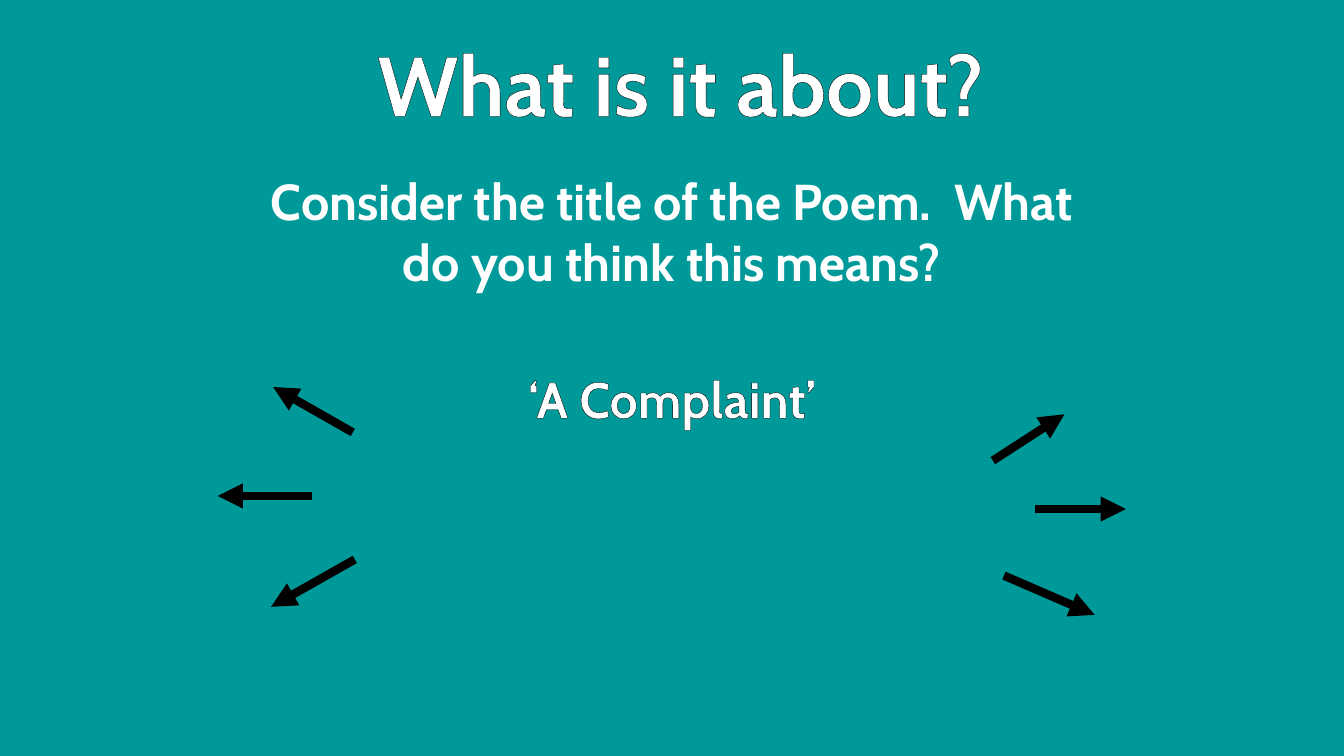
"""Build a slide asking what the title of a poem means."""
from lxml.etree import SubElement
from pptx import Presentation
from pptx.dml.color import RGBColor
from pptx.enum.shapes import MSO_CONNECTOR
from pptx.enum.text import MSO_ANCHOR, MSO_AUTO_SIZE, PP_ALIGN
from pptx.oxml.ns import qn
from pptx.util import Inches, Pt

TEAL = RGBColor(0x00, 0x99, 0x99)
WHITE = RGBColor(0xFF, 0xFF, 0xFF)
BLACK = RGBColor(0x00, 0x00, 0x00)

COLUMNS, ROWS = 160, 90
TITLE = {"text": "What is it about?", "place": (20, 3.24, 120, 13.32),
         "size": 60, "outline": 1.5, "wrap": True, "indent": 0.27}
QUESTION = {"text": "Consider the title of the Poem.  What do you think this means?",
            "place": (30.6, 19.68, 98.76, 15.72),
            "size": 36, "outline": 0, "wrap": True, "indent": 0.1}
POEM = {"text": "‘A Complaint’", "place": (45.48, 43.2, 69, 35.76),
        "size": 36, "outline": 2.25, "wrap": False, "indent": 0.1}
ARROWS = [
    ((42, 51.48), (32.52, 46.08)),
    ((37.2, 59.04), (25.92, 59.04)),
    ((42.24, 66.6), (32.28, 72.24)),
    ((118.2, 54.84), (126.72, 49.32)),
    ((123.24, 60.6), (134.04, 60.6)),
    ((119.52, 68.52), (130.32, 73.2)),
]

deck = Presentation()
deck.slide_width, deck.slide_height = Inches(13.33), Inches(7.5)


def to_lengths(place):
    """Turn alternating columns and rows into slide lengths."""
    units = (deck.slide_width / COLUMNS, deck.slide_height / ROWS)
    return [round(value * units[index % 2]) for index, value in enumerate(place)]


def outline_text(span, width):
    """Draw a black line around the letters."""
    line = SubElement(span.font._element, qn("a:ln"), w=str(Pt(width)))
    span.font._element.insert(0, line)
    fill = SubElement(line, qn("a:solidFill"))
    SubElement(fill, qn("a:srgbClr"), val=str(BLACK))


def write(box, content):
    """Place a box and fill it with one centred, bold paragraph."""
    box.left, box.top, box.width, box.height = to_lengths(content["place"])
    frame = box.text_frame
    frame_format = {"word_wrap": content["wrap"], "auto_size": MSO_AUTO_SIZE.NONE,
                    "vertical_anchor": MSO_ANCHOR.TOP,
                    "margin_left": Inches(content["indent"])}
    for name, value in frame_format.items():
        setattr(frame, name, value)
    para = frame.paragraphs[0]
    para.alignment = PP_ALIGN.CENTER
    para.space_before = Pt(0)
    span = para.add_run()
    span.text = content["text"]
    font_format = {"name": "Cabin", "size": Pt(content["size"]), "bold": True}
    for name, value in font_format.items():
        setattr(span.font, name, value)
    span.font.color.rgb = WHITE
    if content["outline"]:
        outline_text(span, content["outline"])


def add_arrow(shapes, start, end):
    """Draw a thick black arrow."""
    arrow = shapes.add_connector(MSO_CONNECTOR.STRAIGHT, *to_lengths(start + end))
    arrow.line.color.rgb = BLACK
    arrow.line.width = Pt(6)
    SubElement(arrow.line._get_or_add_ln(), qn("a:tailEnd"), type="triangle")
    SubElement(arrow._element.spPr, qn("a:effectLst"))


def main():
    """Build and save the slide."""
    page = deck.slides.add_slide(deck.slide_layouts[0])
    page.background.fill.solid()
    page.background.fill.fore_color.rgb = TEAL
    write(page.shapes.title, TITLE)
    write(page.placeholders[1], QUESTION)
    diagram = page.shapes.add_group_shape().shapes
    write(diagram.add_textbox(*to_lengths(POEM["place"])), POEM)
    for start, end in ARROWS:
        add_arrow(diagram, start, end)
    deck.save("out.pptx")


if __name__ == "__main__":
    main()
